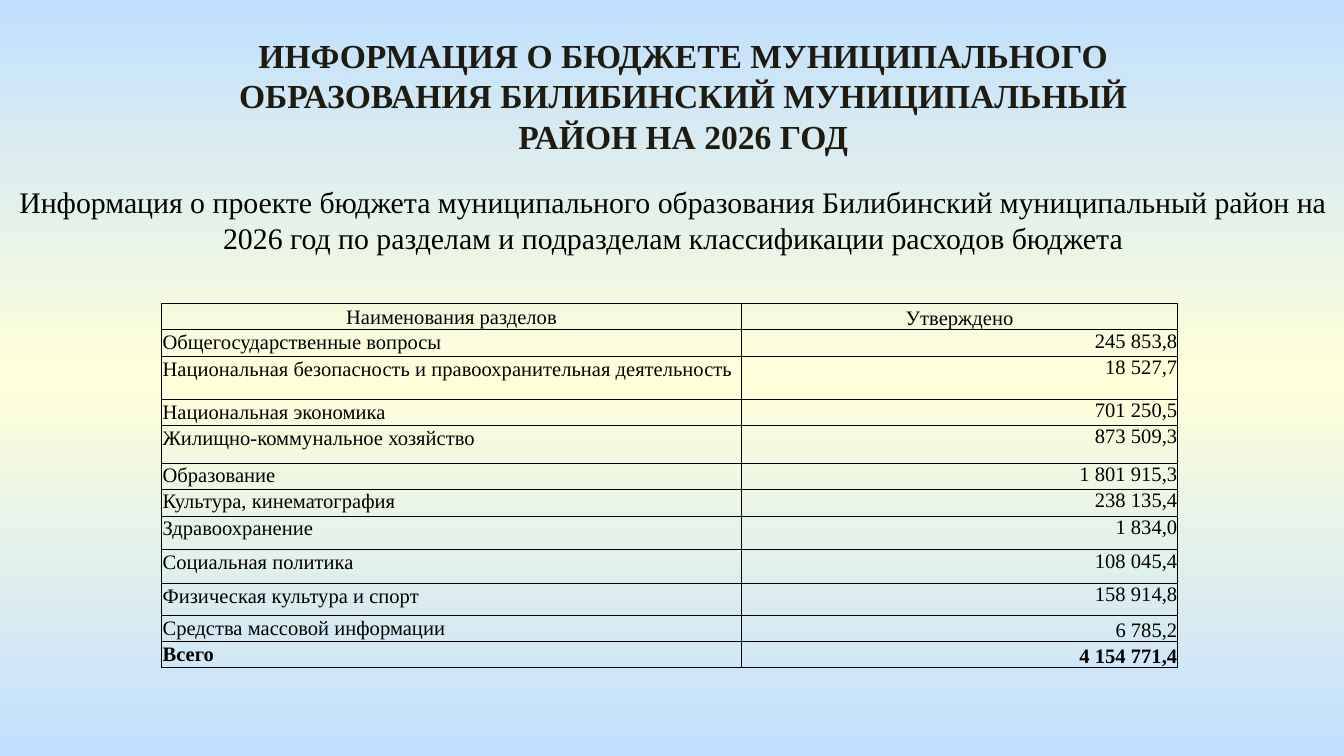
from copy import deepcopy
from typing import NamedTuple

from lxml import etree
from pptx import Presentation
from pptx import util as u
from pptx.dml.color import RGBColor
from pptx.enum import text
from pptx.oxml import ns

FONT = "Times New Roman"
SKY = RGBColor(0xC1, 0xE0, 0xFF)
CREAM = RGBColor(0xFF, 0xFF, 0xD9)
TITLE_INK = RGBColor(0x1E, 0x1C, 0x11)
BLACK = RGBColor(0, 0, 0)
LEFT, CENTER, RIGHT = text.PP_ALIGN.LEFT, text.PP_ALIGN.CENTER, text.PP_ALIGN.RIGHT
TOP, MIDDLE, BOTTOM = text.MSO_ANCHOR.TOP, text.MSO_ANCHOR.MIDDLE, text.MSO_ANCHOR.BOTTOM


class BudgetRow(NamedTuple):
    section: str
    amount: str
    height: float
    amount_anchor: text.MSO_ANCHOR = TOP


HEADER = BudgetRow("Наименования разделов", "Утверждено", 0.16, BOTTOM)
TOTAL = BudgetRow("Всего", "4 154 771,4", 0.19, BOTTOM)
ROWS = [
    HEADER,
    BudgetRow("Общегосударственные вопросы", "245 853,8", 0.2),
    BudgetRow("Национальная безопасность и правоохранительная деятельность", "18 527,7", 0.32),
    BudgetRow("Национальная экономика", "701 250,5", 0.19),
    BudgetRow("Жилищно-коммунальное хозяйство", "873 509,3", 0.28),
    BudgetRow("Образование", "1 801 915,3", 0.19),
    BudgetRow("Культура, кинематография", "238 135,4", 0.2),
    BudgetRow("Здравоохранение", "1 834,0", 0.25),
    BudgetRow("Социальная политика", "108 045,4", 0.25),
    BudgetRow("Физическая культура и спорт", "158 914,8", 0.24),
    BudgetRow("Средства массовой информации", "6 785,2", 0.19, BOTTOM),
    TOTAL,
]


def write(frame, words: str, size: float, color: RGBColor, align, bold: bool = False) -> None:
    para = frame.paragraphs[0]
    para.text = words
    para.alignment = align
    font = para.font
    font.name, font.size, font.bold = FONT, u.Pt(size), bold
    font.color.rgb = color


def fill_text_box(box, place: tuple, words: str, size: float, color: RGBColor,
                  bold: bool = False) -> None:
    box.left, box.top, box.width, box.height = map(u.Inches, place)
    frame = box.text_frame
    frame.word_wrap = True
    frame.auto_size = text.MSO_AUTO_SIZE.SHAPE_TO_FIT_TEXT
    frame.vertical_anchor = TOP
    write(frame, words, size, color, CENTER, bold)


def paint_background(slide) -> None:
    fill = slide.background.fill
    fill.gradient()
    fill.gradient_angle = 270
    # The default gradient has two stops; add a middle one
    first = fill._fill._gradFill.find(ns.qn("a:gsLst"))[0]
    first.addnext(deepcopy(first))
    for stop, color, position in zip(fill.gradient_stops, (SKY, CREAM, SKY), (0, 0.5, 1)):
        stop.color.rgb = color
        stop.position = position


def add_borders(cell) -> None:
    properties = cell._tc.get_or_add_tcPr()
    for side in ("lnL", "lnR", "lnT", "lnB"):
        line = etree.SubElement(properties, ns.qn(f"a:{side}"), w=str(u.Pt(0.5)))
        solid = etree.SubElement(line, ns.qn("a:solidFill"))
        etree.SubElement(solid, ns.qn("a:srgbClr"), val=str(BLACK))


def fill_cell(cell, words: str, align, anchor, inset: float, bold: bool) -> None:
    cell.margin_left = cell.margin_top = cell.margin_right = u.Inches(inset)
    cell.margin_bottom = 0
    cell.vertical_anchor = anchor
    add_borders(cell)
    cell.fill.background()
    write(cell.text_frame, words, 11, BLACK, align, bold)


def add_budget_table(slide) -> None:
    frame = slide.shapes.add_table(len(ROWS), 2, u.Inches(1.2), u.Inches(2.26),
                                   u.Inches(7.56), u.Inches(2.69))
    table = frame.table
    table.first_row = table.horz_banding = False
    table.columns[0].width, table.columns[1].width = u.Inches(4.32), u.Inches(3.24)
    for index, row in enumerate(ROWS):
        table.rows[index].height = u.Inches(row.height)
        is_header, is_total = row is HEADER, row is TOTAL
        fill_cell(table.cell(index, 0), row.section, CENTER if is_header else LEFT,
                  MIDDLE if is_header else TOP, 0.01, is_total)
        fill_cell(table.cell(index, 1), row.amount, CENTER if is_header else RIGHT,
                  row.amount_anchor, 0.01 if is_header else 0, is_total)


def main() -> None:
    # Widescreen 16:9 page
    deck = Presentation()
    deck.slide_width = u.Inches(10)
    deck.slide_height = deck.slide_width * 9 // 16
    page = deck.slides.add_slide(deck.slide_layouts[5])
    paint_background(page)

    # Title and subtitle
    fill_text_box(page.shapes.title, (1.22, 0.21, 7.73, 1.01),
                  "ИНФОРМАЦИЯ О БЮДЖЕТЕ МУНИЦИПАЛЬНОГО ОБРАЗОВАНИЯ БИЛИБИНСКИЙ "
                  "МУНИЦИПАЛЬНЫЙ РАЙОН НА 2026 ГОД", 18, TITLE_INK, bold=True)
    fill_text_box(page.shapes.add_textbox(0, 0, 0, 0), (0.01, 1.32, 10, 0.64),
                  "Информация о проекте бюджета муниципального образования Билибинский "
                  "муниципальный район на 2026 год по разделам и подразделам "
                  "классификации расходов бюджета", 16, BLACK)

    # Budget by section
    add_budget_table(page)
    deck.save("out.pptx")


if __name__ == "__main__":
    main()
